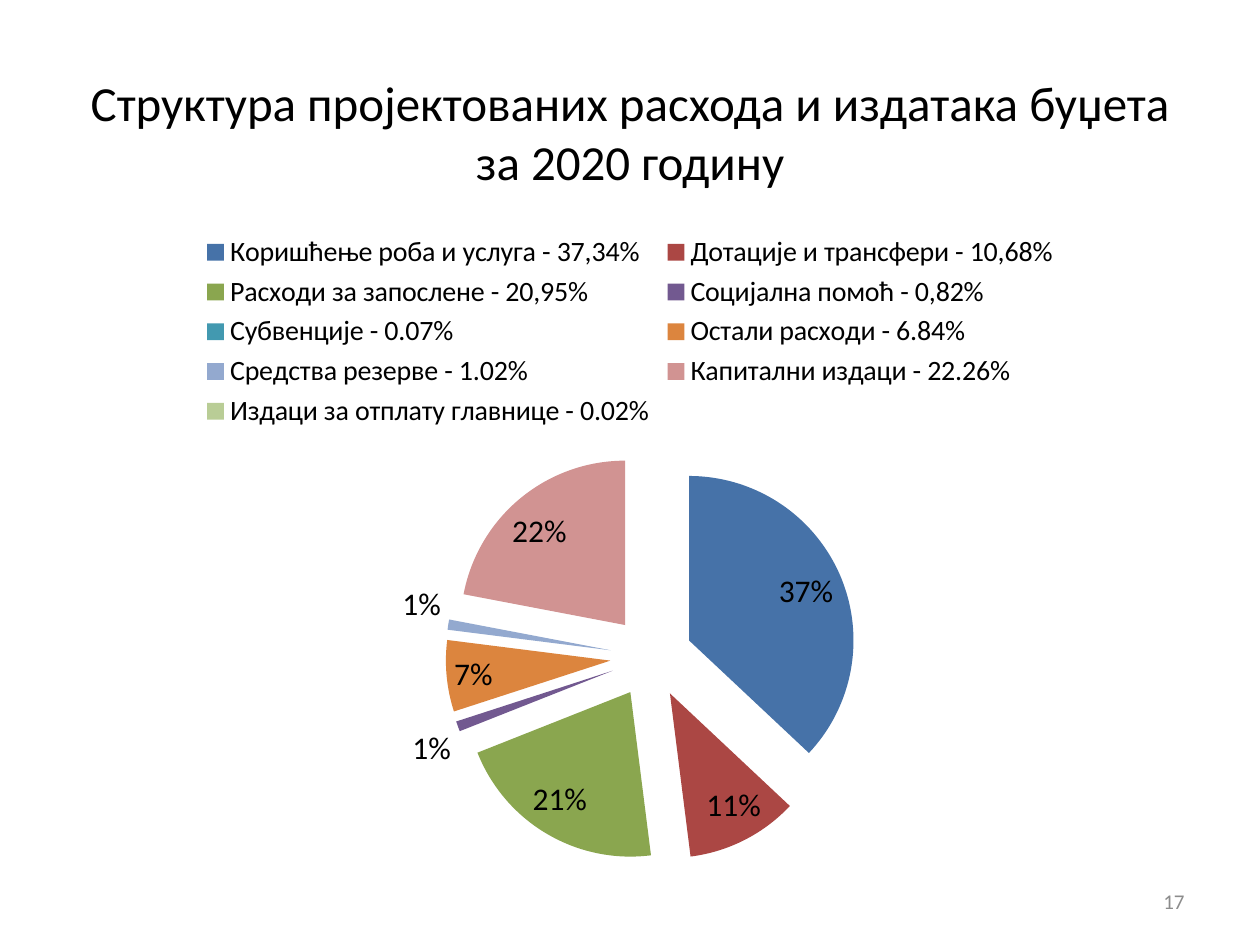
from lxml import etree
from pptx import Presentation
from pptx.chart.data import CategoryChartData
from pptx.dml.color import RGBColor
from pptx.enum.chart import XL_CHART_TYPE as ChartType, XL_LABEL_POSITION as LabelPos, XL_LEGEND_POSITION as LegendPos
from pptx.enum.text import MSO_ANCHOR as Anchor, PP_ALIGN as Align
from pptx.oxml.ns import qn
from pptx.util import Inches, Pt


def style(font, size, color):
    font.name = "Calibri"
    font.size = Pt(size)
    font.color.rgb = RGBColor.from_string(color)


def add_text(page, text, left, top, width, height, align, size, color):
    box = page.shapes.add_textbox(Inches(left), Inches(top), Inches(width), Inches(height))
    frame = box.text_frame
    frame.word_wrap = True
    frame.vertical_anchor = Anchor.MIDDLE
    frame.text = text
    para = frame.paragraphs[0]
    para.alignment = align
    style(para.runs[0].font, size, color)


deck = Presentation()
deck.slide_width = Inches(10)
deck.slide_height = Inches(7.5)
page = deck.slides.add_slide(deck.slide_layouts[6])

add_text(page, "Структура пројектованих расхода и издатака буџета за 2020 годину",
         0.5, 0.58, 9, 0.92, Align.CENTER, 28, "000000")

expenses = [
    ("Коришћење роба и услуга - 37,34%", 37, "4672A8"),
    ("Дотације и трансфери - 10,68%", 11, "AB4744"),
    ("Расходи за запослене - 20,95%", 21, "8AA64F"),
    ("Социјална помоћ - 0,82%", 1, "725990"),
    ("Субвенције - 0.07%", 0, "4299B0"),
    ("Остали расходи - 6.84%", 7, "DC853E"),
    ("Средства резерве - 1.02%", 1, "93A9CF"),
    ("Капитални издаци - 22.26%", 22, "D19392"),
    ("Издаци за отплату главнице - 0.02%", 0, "B9CD96"),
]
data = CategoryChartData()
data.categories = [name for name, share, color in expenses]
data.add_series("Series 1", [share for name, share, color in expenses])
chart = page.shapes.add_chart(ChartType.PIE, Inches(0.5), Inches(1.75), Inches(9), Inches(5.5), data).chart
style(chart.font, 18, "000000")
chart.has_title = False
chart.has_legend = True
chart.legend.position = LegendPos.TOP
chart.legend.include_in_layout = False
style(chart.legend.font, 16, "000000")

plot = chart.plots[0]
plot.vary_by_categories = True
series = plot.series[0]
for index, (name, share, color) in enumerate(expenses):
    fill = series.points[index].format.fill
    fill.solid()
    fill.fore_color.rgb = RGBColor.from_string(color)

explosion = etree.Element(qn("c:explosion"), val="25")
series._element.find(qn("c:dPt")).addprevious(explosion)

labels = series.data_labels
labels.show_percentage = True
labels.show_value = False
labels.number_format = "0%"
labels.number_format_is_linked = False
labels.position = LabelPos.BEST_FIT
style(labels.font, 18, "000000")
label_xml = series._element.find(qn("c:dLbls"))
leader = label_xml.find(qn("c:showLeaderLines"))
if leader is None:
    leader = etree.SubElement(label_xml, qn("c:showLeaderLines"))
leader.set("val", "0")

add_text(page, "17", 7.17, 6.95, 2.33, 0.4, Align.RIGHT, 12, "8C8C8C")

deck.save("out.pptx")
